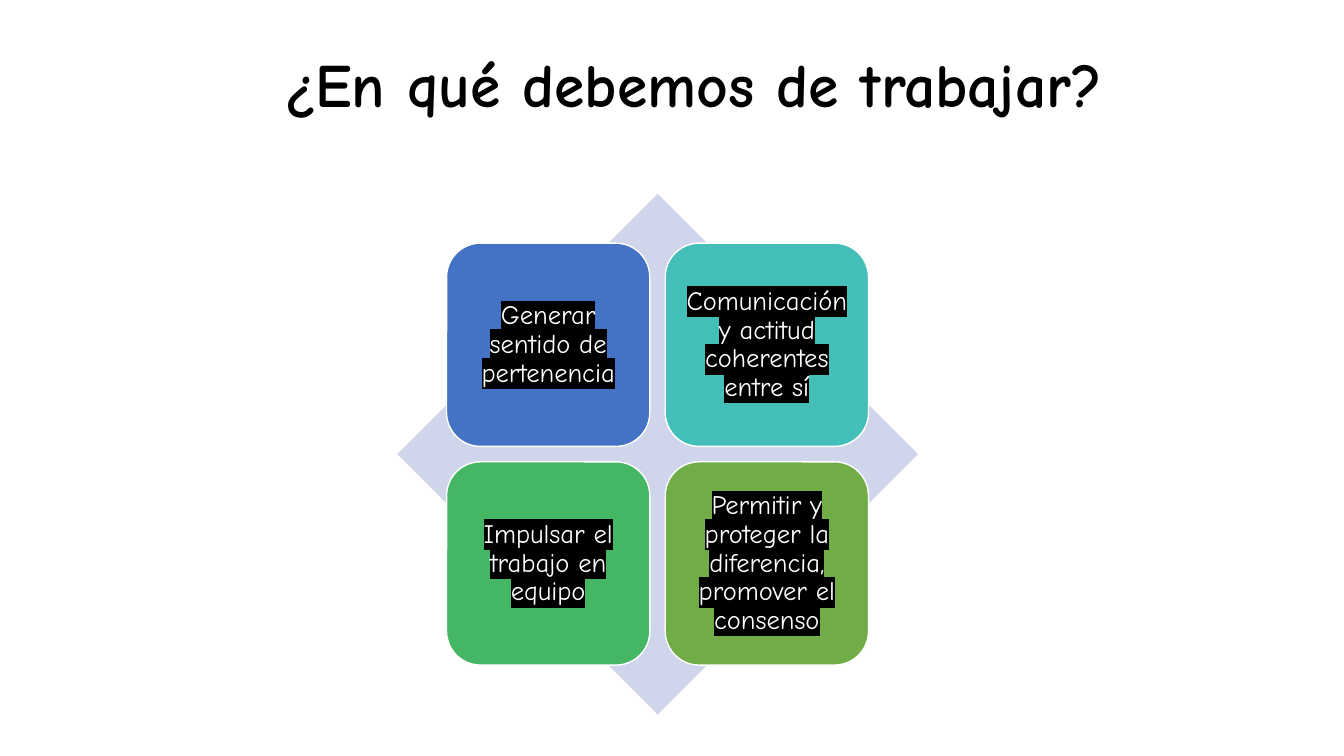
from lxml import etree
from pptx import Presentation
from pptx.dml.color import RGBColor
from pptx.enum import shapes, text
from pptx.oxml import ns
from pptx.util import Pt

TITLE = "¿En qué debemos de trabajar?"
GOALS = [
    ("Generar sentido de pertenencia", "4472C4"),
    ("Comunicación y actitud coherentes entre sí", "43BEB9"),
    ("Impulsar el trabajo en equipo", "45B664"),
    ("Permitir y proteger la diferencia, promover el consenso", "70AD47"),
]
FONT = "Comic Neue"
CENTER_X, CENTER_Y = 469.7, 324.4
DIAMOND = 372
TILE, GAP = 145.2, 11
INSET = 5.7


def color(value):
    return RGBColor.from_string(value)


def write(box, words, size, ink, bold=False):
    frame = box.text_frame
    frame.word_wrap = True
    frame.vertical_anchor = text.MSO_ANCHOR.MIDDLE
    para = frame.paragraphs[0]
    para.alignment = text.PP_ALIGN.CENTER
    para.line_spacing = 0.9
    para.font.name = FONT
    para.font.size = Pt(size)
    para.font.bold = bold
    para.font.color.rgb = color(ink)
    span = para.add_run()
    span.text = words
    return span


def highlight(span, value):
    props = span.font._element
    mark = etree.SubElement(props, ns.qn("a:highlight"))
    etree.SubElement(mark, ns.qn("a:srgbClr"), val=value)


def add_square(page, kind, left, top, side, fill):
    square = page.shapes.add_shape(kind, Pt(left), Pt(top), Pt(side), Pt(side))
    square.shadow.inherit = False
    square.fill.solid()
    square.fill.fore_color.rgb = color(fill)
    square.line.fill.background()
    return square


def add_goal(page, index, words, fill):
    row, column = divmod(index, 2)
    corner = TILE + GAP / 2
    left = CENTER_X - corner + column * (TILE + GAP)
    top = CENTER_Y - corner + row * (TILE + GAP)
    tile = add_square(page, shapes.MSO_SHAPE.ROUNDED_RECTANGLE, left, top, TILE, fill)
    tile.line.color.rgb = color("FFFFFF")
    tile.line.width = Pt(1)
    frame = tile.text_frame
    frame.margin_left = frame.margin_right = Pt(INSET)
    frame.margin_top = frame.margin_bottom = Pt(INSET)
    highlight(write(tile, words, 19, "FFFFFF"), "000000")


def main():
    deck = Presentation()
    deck.slide_width, deck.slide_height = Pt(960), Pt(540)
    page = deck.slides.add_slide(deck.slide_layouts[6])

    heading = page.shapes.add_textbox(Pt(121.7), Pt(0), Pt(747.4), Pt(124.6))
    write(heading, TITLE, 44, "000000", bold=True)

    add_square(page, shapes.MSO_SHAPE.DIAMOND, CENTER_X - DIAMOND / 2,
               CENTER_Y - DIAMOND / 2, DIAMOND, "CFD5EA")
    for index, (words, fill) in enumerate(GOALS):
        add_goal(page, index, words, fill)

    deck.save("out.pptx")


if __name__ == "__main__":
    main()
